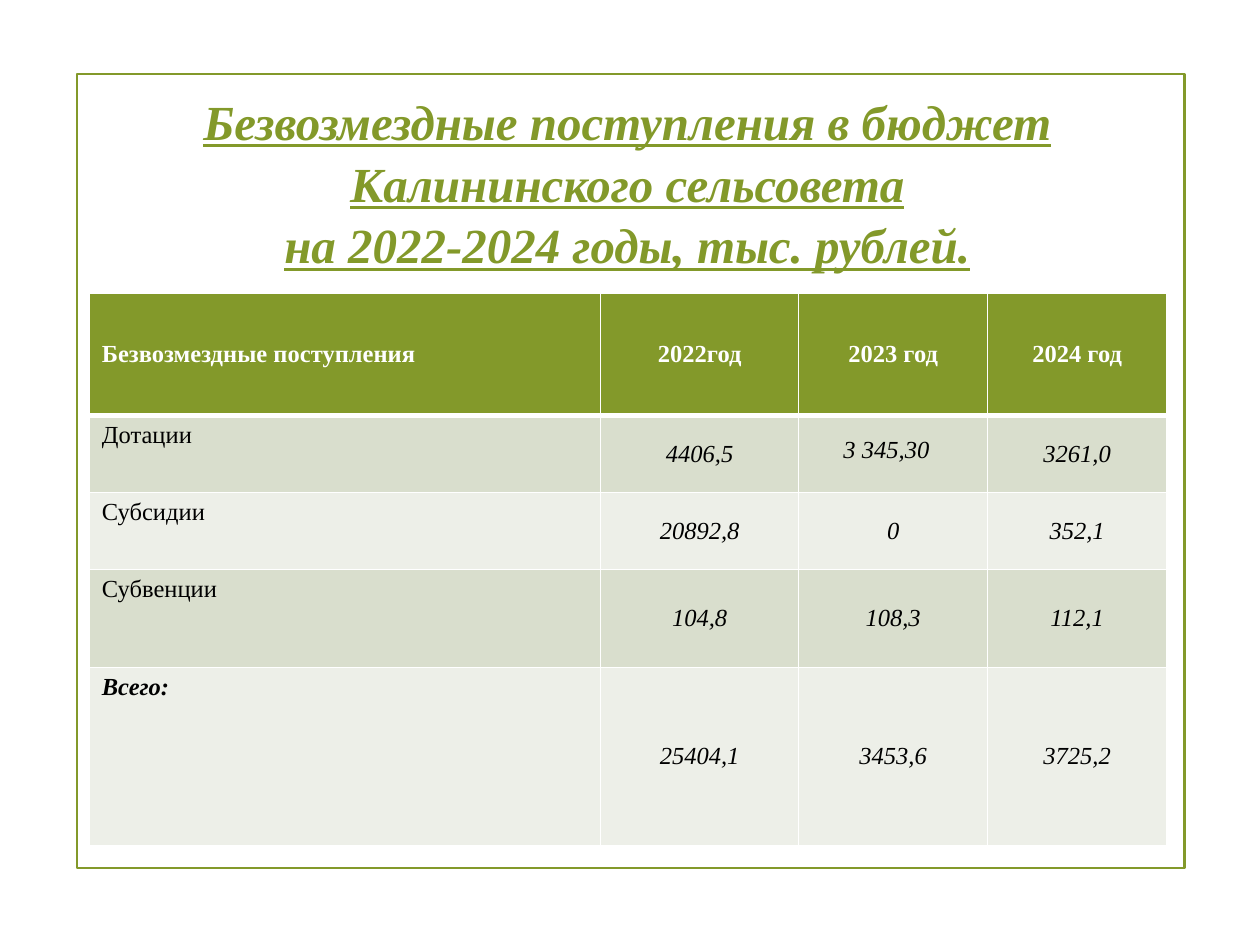
import pptx
import pptx.dml.color
import pptx.enum.shapes
import pptx.enum.text
import pptx.oxml
import pptx.oxml.ns
import pptx.util
from pptx.util import Cm, Pt

TITLE = [
    "Безвозмездные поступления в бюджет Калининского сельсовета",
    "на 2022-2024 годы, тыс. рублей.",
]
HEADER = ["Безвозмездные поступления", "2022год", "2023 год", "2024 год"]
INCOME = [
    ["Дотации", "4406,5", "3 345,30", "3261,0"],
    ["Субсидии", "20892,8", "0", "352,1"],
    ["Субвенции", "104,8", "108,3", "112,1"],
    ["Всего:", "25404,1", "3453,6", "3725,2"],
]
TOTAL_ROW = len(INCOME)
RAISED_CELL = (1, 2)

COLUMN_WIDTHS = [10.31, 3.99, 3.81, 3.61]
ROW_HEIGHTS = [2.46, 1.55, 1.55, 1.98, 3.58]

THEME = {
    "font": "Times New Roman",
    "title_size": 28,
    "table_size": 14,
    "green": "83992A",
    "bands": ["D9DECD", "EDEFE8"],
    "white": "FFFFFF",
    "black": "000000",
}
ALIGN = pptx.enum.text.PP_ALIGN
ANCHOR = pptx.enum.text.MSO_ANCHOR


def rgb(name):
    return pptx.dml.color.RGBColor.from_string(name)


def add_run(paragraph, text, size, color, bold=False, italic=False, underline=False):
    run = paragraph.add_run()
    run.text = text
    font = run.font
    font.name, font.size = THEME["font"], Pt(size)
    font.color.rgb = rgb(color)
    font.bold, font.italic, font.underline = bold, italic, underline


def set_borders(cell, bottom_width):
    properties = cell._tc.get_or_add_tcPr()
    widths = {"lnL": 1, "lnR": 1, "lnT": 1, "lnB": bottom_width}
    for position, (side, width) in enumerate(widths.items()):
        border = pptx.oxml.parse_xml(
            f'<a:{side} {pptx.oxml.ns.nsdecls("a")} w="{Pt(width)}"><a:solidFill>'
            f'<a:srgbClr val="{THEME["white"]}"/></a:solidFill></a:{side}>'
        )
        properties.insert(position, border)


def add_frame(slide):
    frame = slide.shapes.add_shape(
        pptx.enum.shapes.MSO_SHAPE.RECTANGLE, Cm(1.55), Cm(1.5), Cm(22.33), Cm(16)
    )
    frame.shadow.inherit = False
    frame.fill.background()
    frame.line.color.rgb = rgb(THEME["green"])
    frame.line.width = Pt(1.25)


def fill_title(title):
    title.left, title.top, title.width, title.height = Cm(1.14), Cm(1.73), Cm(23.01), Cm(3.84)
    text_frame = title.text_frame
    text_frame.word_wrap = True
    text_frame.auto_size = pptx.enum.text.MSO_AUTO_SIZE.SHAPE_TO_FIT_TEXT
    text_frame.vertical_anchor = ANCHOR.MIDDLE
    for index, line in enumerate(TITLE):
        paragraph = text_frame.add_paragraph() if index else text_frame.paragraphs[0]
        paragraph.alignment = ALIGN.CENTER
        paragraph.line_spacing = 1.05
        paragraph.space_before = Pt(0)
        add_run(paragraph, line, THEME["title_size"], THEME["green"], True, True, True)


def fill_cell(cell, text, row, column):
    is_header, is_label = row == 0, column == 0
    cell.fill.solid()
    cell.fill.fore_color.rgb = rgb(THEME["green"] if is_header else THEME["bands"][(row - 1) % 2])
    set_borders(cell, 3 if is_header else 1)
    cell.vertical_anchor = ANCHOR.TOP if is_label and not is_header else ANCHOR.MIDDLE
    if (row, column) == RAISED_CELL:
        cell.margin_left = cell.margin_top = Cm(0.03)
        cell.margin_right, cell.margin_bottom = Cm(0.3), Cm(0.18)
    paragraph = cell.text_frame.paragraphs[0]
    paragraph.alignment = ALIGN.LEFT if is_label else ALIGN.CENTER
    is_total_label = is_label and row == TOTAL_ROW
    add_run(
        paragraph, text, THEME["table_size"],
        THEME["white"] if is_header else THEME["black"],
        bold=is_header or is_total_label,
        italic=not is_header and (not is_label or is_total_label),
    )


def add_income_table(slide):
    rows = [HEADER] + INCOME
    table = slide.shapes.add_table(
        len(rows), len(HEADER), Cm(1.8), Cm(5.92),
        Cm(sum(COLUMN_WIDTHS)), Cm(sum(ROW_HEIGHTS)),
    ).table
    for column, width in zip(table.columns, COLUMN_WIDTHS):
        column.width = Cm(width)
    for row, height in zip(table.rows, ROW_HEIGHTS):
        row.height = Cm(height)
    for row, texts in enumerate(rows):
        for column, text in enumerate(texts):
            fill_cell(table.cell(row, column), text, row, column)


def main():
    presentation = pptx.Presentation()
    presentation.slide_width, presentation.slide_height = Cm(25.4), Cm(19.05)
    slide = presentation.slides.add_slide(presentation.slide_layouts[5])
    add_frame(slide)
    fill_title(slide.shapes.title)
    add_income_table(slide)
    presentation.save("out.pptx")


if __name__ == "__main__":
    main()
